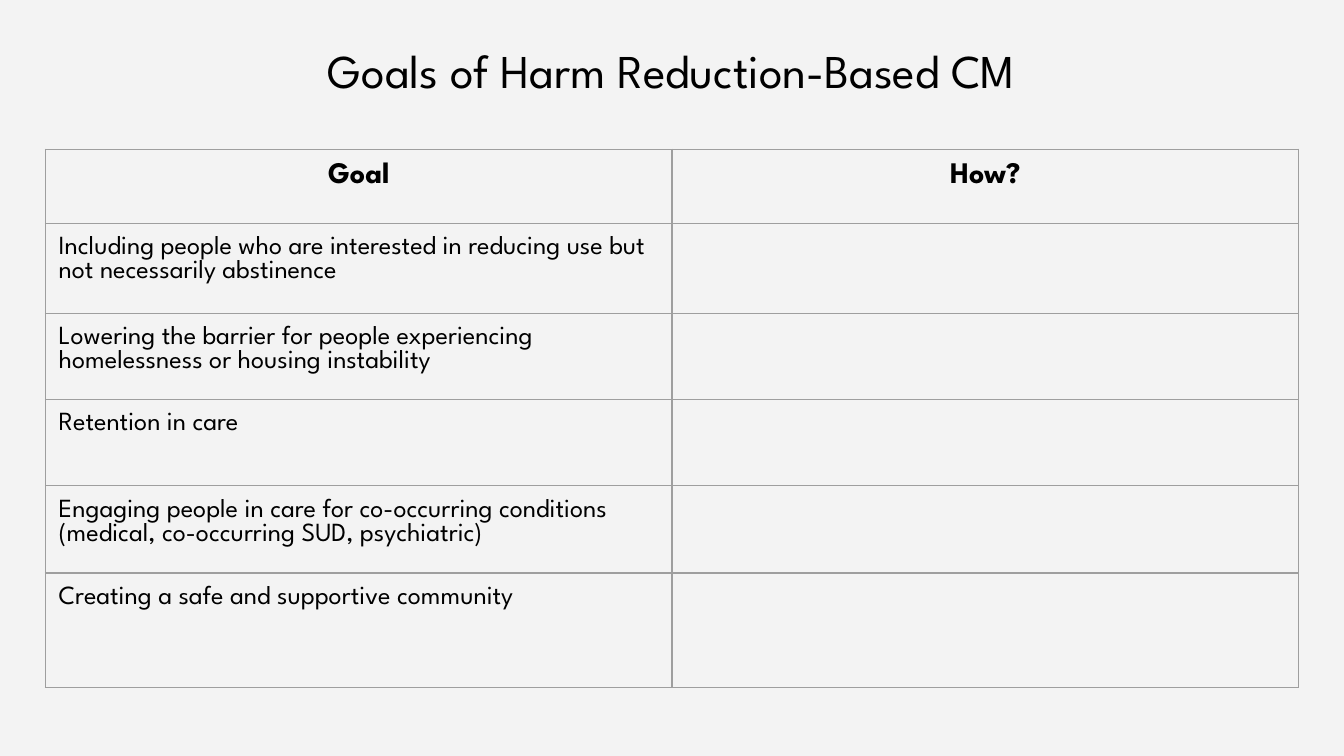
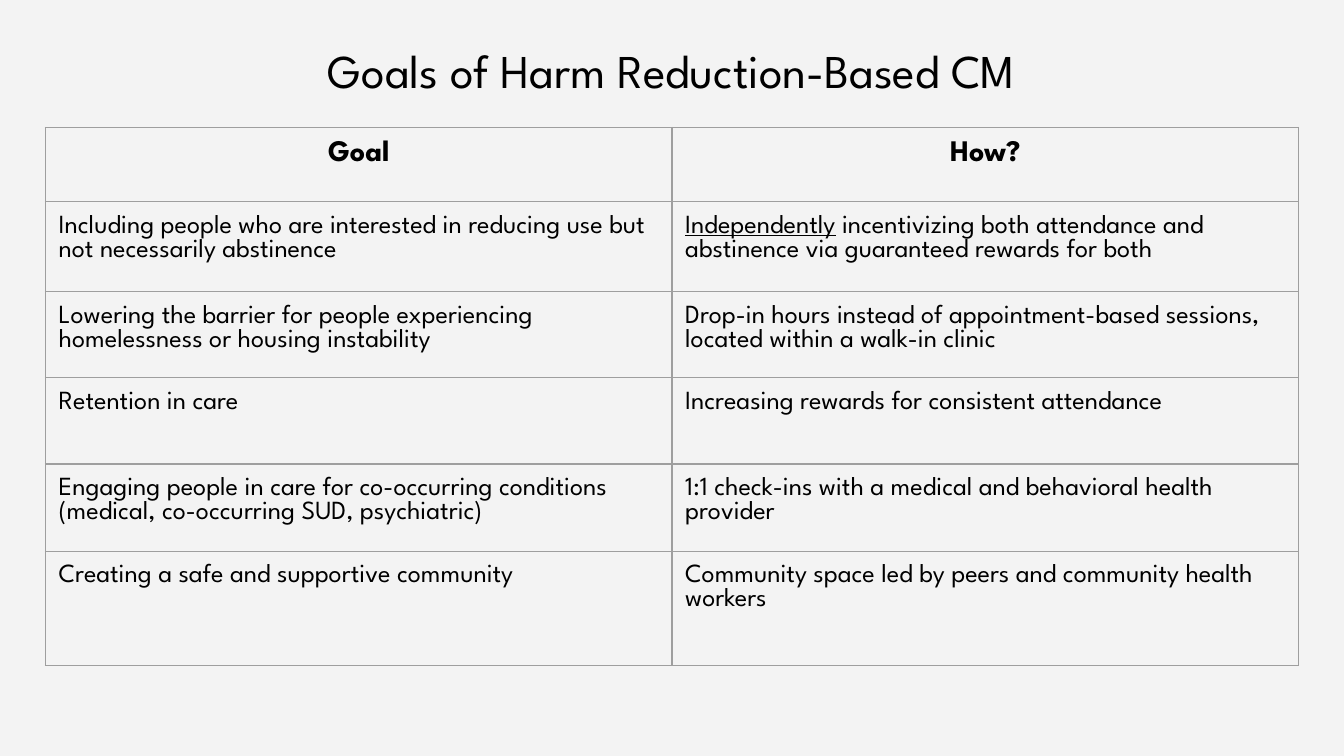
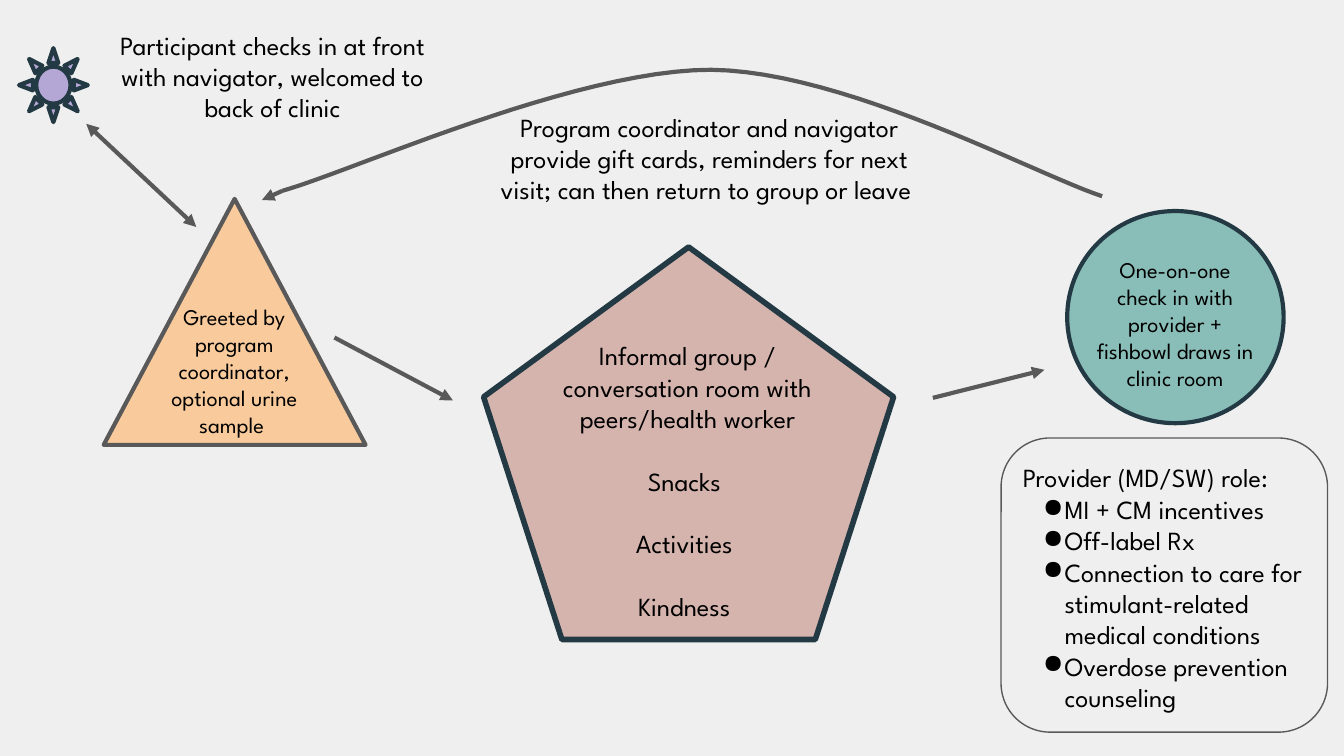
from dataclasses import dataclass

from lxml.etree import Element, SubElement
from pptx import Presentation
from pptx.dml.color import RGBColor
from pptx.enum.shapes import MSO_CONNECTOR as Connector
from pptx.enum.shapes import MSO_SHAPE as Preset
from pptx.enum.text import MSO_ANCHOR as Anchor
from pptx.enum.text import MSO_AUTO_SIZE as AutoSize
from pptx.enum.text import PP_ALIGN as Align
from pptx.oxml.ns import qn
from pptx.util import Cm, Pt


@dataclass(frozen=True)
class Theme:
    font: str = "League Spartan"
    text: str = "000000"
    table_background: str = "F3F3F3"
    flow_background: str = "EFEFEF"
    grid: str = "9E9E9E"
    gray: str = "595959"
    navy: str = "233A44"
    rose: str = "D6B4AE"
    teal: str = "89BEB8"
    violet: str = "B4A7D6"
    orange: str = "F9CB9C"
    title_size: float = 25.2
    header_size: float = 16
    body_size: float = 14
    small_size: float = 12
    thin: float = 0.75
    medium: float = 2.25
    thick: float = 3
    inset: float = 0.25


def color(value):
    return RGBColor.from_string(value)


def bezier(start, first, second, end, steps=24):
    """Points along a cubic curve, without its start."""
    points = []
    for step in range(1, steps + 1):
        t = step / steps
        weights = ((1 - t) ** 3, 3 * t * (1 - t) ** 2, 3 * t**2 * (1 - t), t**3)
        corners = (start, first, second, end)
        points.append(tuple(
            sum(w * corner[axis] for w, corner in zip(weights, corners))
            for axis in (0, 1)))
    return points


class Deck:
    def __init__(self, theme):
        self.theme = theme
        self.presentation = Presentation()
        self.presentation.slide_width = Cm(25.4)
        self.presentation.slide_height = Cm(14.29)
        self.slide = None

    # Slides
    def add_slide(self, background, title=None):
        layout = self.presentation.slide_layouts[5 if title else 6]
        self.slide = self.presentation.slides.add_slide(layout)
        fill = self.slide.background.fill
        fill.solid()
        fill.fore_color.rgb = color(background)
        if title:
            shape = self.slide.shapes.title
            shape.left, shape.top = Cm(0.86), Cm(0.53)
            shape.width, shape.height = Cm(23.67), Cm(1.6)
            self.prepare_frame(shape.text_frame)
            self.add_text(shape.text_frame.paragraphs[0], [title],
                          self.theme.title_size, Align.CENTER, spacing=1.0)

    # Text
    def prepare_frame(self, frame):
        frame.word_wrap = True
        frame.auto_size = AutoSize.NONE
        frame.vertical_anchor = Anchor.TOP
        inset = Cm(self.theme.inset)
        frame.margin_left = frame.margin_right = inset
        frame.margin_top = frame.margin_bottom = inset

    def add_text(self, paragraph, runs, size, align=Align.LEFT, bold=False,
                 spacing=None):
        """Each run is a string, or a (string, underline) pair."""
        paragraph.alignment = align
        if spacing:
            paragraph.line_spacing = spacing
        for item in runs:
            text, underline = (item, False) if isinstance(item, str) else item
            run = paragraph.add_run()
            run.text = text
            run.font.name = self.theme.font
            run.font.size = Pt(size)
            run.font.bold = bold
            run.font.underline = underline
            run.font.color.rgb = color(self.theme.text)

    def text_box(self, box, lines, size, align=Align.CENTER, gap=0,
                 bulleted=False):
        """Fill a box with lines; bulleted marks all lines but the first."""
        shape = self.slide.shapes.add_textbox(*map(Cm, box))
        frame = shape.text_frame
        self.prepare_frame(frame)
        for index, line in enumerate(lines):
            paragraph = frame.paragraphs[0] if index == 0 else frame.add_paragraph()
            self.add_text(paragraph, [line], size, align, spacing=1.0)
            if index and gap:
                paragraph.space_before = Pt(gap)
            if index and bulleted:
                self.bullet(paragraph)

    def bullet(self, paragraph):
        properties = paragraph._p.get_or_add_pPr()
        properties.set("marL", str(Cm(0.79)))
        properties.set("indent", str(-Cm(0.41)))
        bullet_color = SubElement(properties, qn("a:buClr"))
        SubElement(bullet_color, qn("a:srgbClr"), val=self.theme.text)
        SubElement(properties, qn("a:buChar"), char="●")

    # Shapes and lines
    def outline(self, line, line_color, width):
        line.color.rgb = color(line_color)
        line.width = Pt(width)

    def shape(self, preset, box, fill, line_color, width):
        shape = self.slide.shapes.add_shape(preset, *map(Cm, box))
        shape.shadow.inherit = False
        if fill:
            shape.fill.solid()
            shape.fill.fore_color.rgb = color(fill)
        else:
            shape.fill.background()
        self.outline(shape.line, line_color, width)

    def arrow(self, start, end, both_ends=False):
        connector = self.slide.shapes.add_connector(
            Connector.STRAIGHT, *map(Cm, start + end))
        self.outline(connector.line, self.theme.gray, self.theme.medium)
        line = connector.line._get_or_add_ln()
        for tag in ("a:headEnd", "a:tailEnd") if both_ends else ("a:tailEnd",):
            SubElement(line, qn(tag), type="triangle")
        SubElement(connector._element.spPr, qn("a:effectLst"))

    def curve(self, start, *segments):
        points = [start]
        for segment in segments:
            points += bezier(points[-1], *segment)
        points = [(Cm(x), Cm(y)) for x, y in points]
        builder = self.slide.shapes.build_freeform(*points[0], scale=1.0)
        builder.add_line_segments(points[1:], close=False)
        shape = builder.convert_to_shape()
        shape.shadow.inherit = False
        shape.fill.background()
        self.outline(shape.line, self.theme.gray, self.theme.medium)

    # Tables
    def table(self, left, top, column_widths, row_heights, rows):
        frame = self.slide.shapes.add_table(
            len(row_heights), len(column_widths), Cm(left), Cm(top),
            Cm(sum(column_widths)), Cm(sum(row_heights)))
        table = frame.table
        table.first_row = table.horz_banding = False
        for column, width in zip(table.columns, column_widths):
            column.width = Cm(width)
        for row, height in zip(table.rows, row_heights):
            row.height = Cm(height)
        for row_index, row in enumerate(rows):
            header = row_index == 0
            size = self.theme.header_size if header else self.theme.body_size
            align = Align.CENTER if header else Align.LEFT
            for column_index, runs in enumerate(row):
                cell = table.cell(row_index, column_index)
                self.style_cell(cell)
                self.add_text(cell.text_frame.paragraphs[0], runs, size, align, header)

    def style_cell(self, cell):
        inset = Cm(self.theme.inset)
        cell.margin_left = cell.margin_right = inset
        cell.margin_top = cell.margin_bottom = inset
        cell.fill.background()
        properties = cell._tc.get_or_add_tcPr()
        for index, side in enumerate(("L", "R", "T", "B")):
            border = Element(qn(f"a:ln{side}"), w=str(Pt(self.theme.thin)))
            fill = SubElement(border, qn("a:solidFill"))
            SubElement(fill, qn("a:srgbClr"), val=self.theme.grid)
            properties.insert(index, border)


GOALS = [
    "Including people who are interested in reducing use but not necessarily abstinence",
    "Lowering the barrier for people experiencing homelessness or housing instability",
    "Retention in care",
    "Engaging people in care for co-occurring conditions (medical, co-occurring SUD, psychiatric)",
    "Creating a safe and supportive community",
]
METHODS = [
    [("Independently", True),
     " incentivizing both attendance and abstinence via guaranteed rewards for both"],
    ["Drop-in hours instead of appointment-based sessions, located within a walk-in clinic"],
    ["Increasing rewards for consistent attendance"],
    ["1:1 check-ins with a medical and behavioral health provider"],
    ["Community space led by peers and community health workers"],
]


def goals_slide(deck, table_top, methods):
    deck.add_slide(deck.theme.table_background, "Goals of Harm Reduction-Based CM")
    rows = [(["Goal"], ["How?"])]
    rows += [([goal], method) for goal, method in zip(GOALS, methods)]
    deck.table(0.86, table_top, [11.84] * 2,
               [1.4, 1.7, 1.63, 1.63, 1.65, 2.16], rows)


def visit_flow_slide(deck):
    theme = deck.theme
    body, small = theme.body_size, theme.small_size
    deck.add_slide(theme.flow_background)

    # Stations
    deck.shape(Preset.REGULAR_PENTAGON, (9.14, 4.67, 7.75, 7.42),
               theme.rose, theme.navy, theme.thick)
    deck.shape(Preset.OVAL, (20.17, 3.99, 4.09, 4.01),
               theme.teal, theme.navy, theme.medium)
    deck.shape(Preset.SUN, (0.36, 0.91, 1.3, 1.4),
               theme.violet, theme.navy, theme.medium)
    deck.shape(Preset.ISOSCELES_TRIANGLE, (1.96, 3.76, 4.95, 4.65),
               theme.orange, theme.gray, theme.medium)

    # Station texts
    deck.text_box((1.75, 0.3, 6.81, 1.65), [
        "Participant checks in at front with navigator, welcomed to back of clinic"], body)
    deck.text_box((2.69, 5.49, 3.48, 0.76), [
        "Greeted by program coordinator, optional urine sample "], small)
    deck.text_box((9.91, 6.17, 6.17, 6.3), [
        "Informal group / conversation room with peers/health worker",
        "Snacks ", "Activities ", "Kindness "], body, gap=16.8)
    deck.text_box((20.47, 4.6, 3.48, 0.76), [
        "One-on-one check in with provider + fishbowl draws in clinic room"], small)

    # Course of the visit
    deck.arrow((1.63, 2.34), (3.71, 4.29), both_ends=True)
    deck.arrow((6.32, 6.38), (8.56, 7.57))
    deck.arrow((17.63, 7.52), (19.74, 6.99))

    # Way back to the coordinator
    deck.curve((20.83, 3.71),
               ((19.58, 3.3), (16, 1.35), (13.44, 1.32)),
               ((10.85, 1.32), (6.68, 3.23), (5.33, 3.61)))
    deck.arrow((5.33, 3.61), (4.95, 3.78))
    deck.text_box((9.09, 1.85, 8.64, 0.53), [
        "Program coordinator and navigator provide gift cards, reminders for next "
        "visit; can then return to group or leave "], body)

    # Provider role
    deck.shape(Preset.ROUNDED_RECTANGLE, (18.92, 8.28, 6.17, 5.56),
               None, theme.gray, theme.thin)
    deck.text_box((19.08, 8.48, 6.2, 5.31), [
        "Provider (MD/SW) role:",
        "MI + CM incentives",
        "Off-label Rx",
        "Connection to care for stimulant-related medical conditions",
        "Overdose prevention counseling"], body, Align.LEFT, bulleted=True)


def main():
    deck = Deck(Theme())
    goals_slide(deck, 2.82, [[]] * len(GOALS))
    goals_slide(deck, 2.41, METHODS)
    visit_flow_slide(deck)
    deck.presentation.save("out.pptx")


if __name__ == "__main__":
    main()
